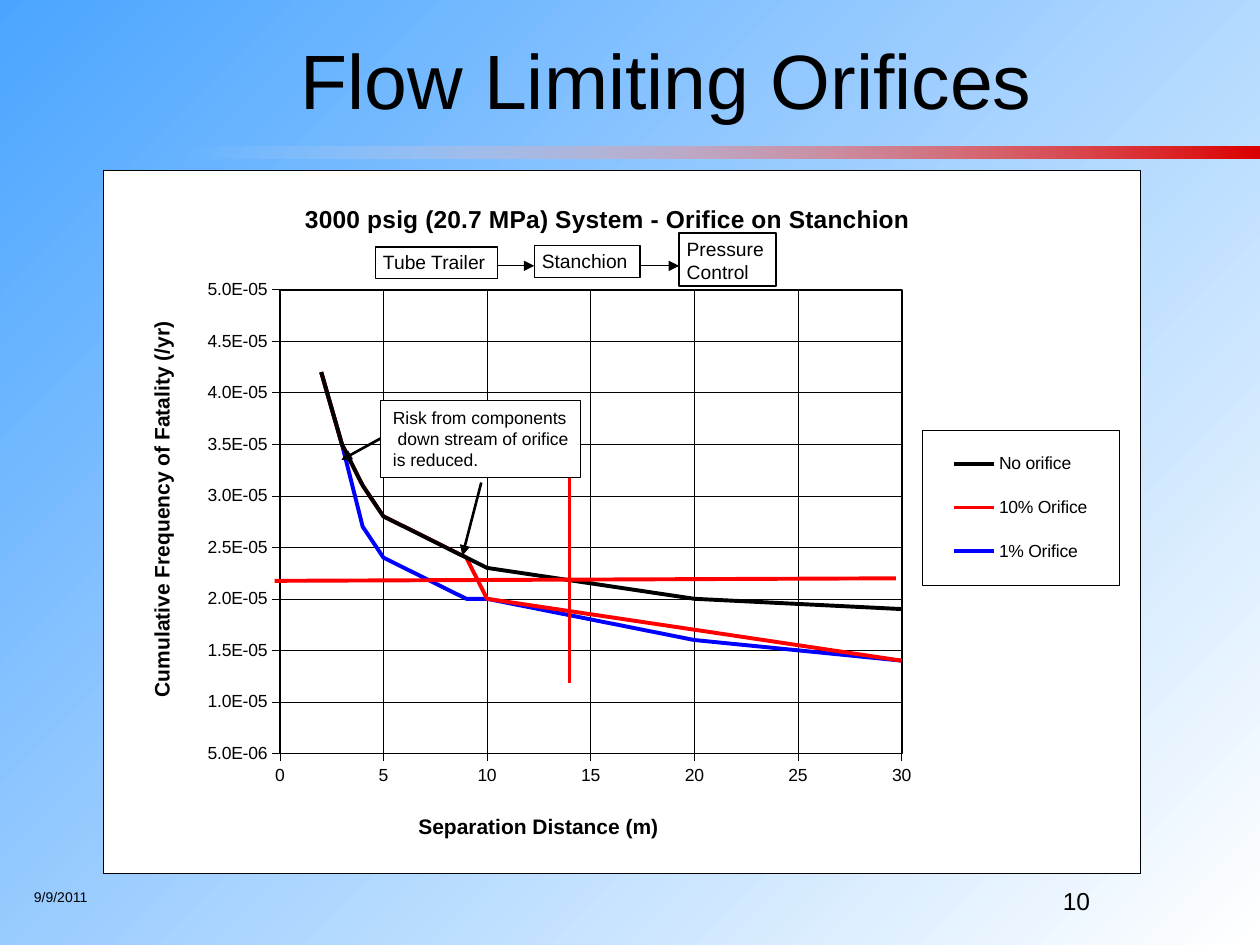
from collections import namedtuple
from dataclasses import dataclass

from lxml import etree
from pptx import Presentation
from pptx import util as u
from pptx.chart.data import XyChartData
from pptx.dml.color import RGBColor
from pptx.enum import chart as charts, shapes, text
from pptx.oxml import parse_xml
from pptx.oxml.ns import nsdecls, qn

Inches, Pt = u.Inches, u.Pt
Box = namedtuple("Box", "left top width height")


@dataclass(frozen=True)
class Theme:
    font: str = "Arial"
    black: RGBColor = RGBColor(0, 0, 0)
    white: RGBColor = RGBColor(255, 255, 255)
    red: RGBColor = RGBColor(255, 0, 0)
    blue: RGBColor = RGBColor(0, 0, 255)
    sky: RGBColor = RGBColor(0x4B, 0xA5, 0xFF)
    bar: RGBColor = RGBColor(0xDC, 0, 0)
    title: int = 44
    number: int = 14
    chart_title: int = 14
    axis_title: int = 12
    flow: int = 11
    body: int = 10
    date: int = 8


THEME = Theme()


def set_font(font, size, bold=False):
    font.name, font.size, font.bold = THEME.font, Pt(size), bold
    font.color.rgb = THEME.black


def set_line(line, color, width):
    line.color.rgb = color
    line.width = Pt(width)


def set_gradient(fill, start, end, angle):
    fill.gradient()
    fill.gradient_angle = angle
    for stop, color in zip(fill.gradient_stops, (start, end)):
        stop.color.rgb = color


def write(shape, words, size, align=text.PP_ALIGN.LEFT, space_after=0):
    frame = shape.text_frame
    frame.word_wrap = True
    frame.vertical_anchor = text.MSO_ANCHOR.TOP
    paragraph = frame.paragraphs[0]
    paragraph.text = words
    paragraph.alignment = align
    paragraph.space_after = Pt(space_after)
    set_font(paragraph.font, size)
    return frame


def add_text(slide, box, words, size, align=text.PP_ALIGN.LEFT):
    write(slide.shapes.add_textbox(*map(Inches, box)), words, size, align)


def add_label(slide, box, words, size, space_after=0):
    shape = slide.shapes.add_shape(shapes.MSO_SHAPE.RECTANGLE, *map(Inches, box))
    shape.shadow.inherit = False
    shape.fill.solid()
    shape.fill.fore_color.rgb = THEME.white
    set_line(shape.line, THEME.black, 0.75)
    return write(shape, words, size, space_after=space_after)


def add_line(slide, box, start, end, color, width, arrow=False):
    """Draw a line between two points measured from the corner of the box."""
    points = [Inches(corner + offset) for point in (start, end)
              for corner, offset in zip(box[:2], point)]
    line = slide.shapes.add_connector(shapes.MSO_CONNECTOR.STRAIGHT, *points)
    set_line(line.line, color, width)
    if arrow:
        tail = etree.SubElement(line.line._get_or_add_ln(), qn("a:tailEnd"))
        tail.set("type", "triangle")
    etree.SubElement(line._element.spPr, qn("a:effectLst"))


def add_heading(slide, box):
    bar = slide.shapes.add_shape(
        shapes.MSO_SHAPE.RECTANGLE, Inches(box.left + 0.56), Inches(box.top + 0.95),
        Inches(8.65), Inches(0.1))
    bar.shadow.inherit = False
    bar.line.fill.background()
    set_gradient(bar.fill, THEME.white, THEME.bar, 0)
    first_color = bar._element.spPr.find(".//" + qn("a:srgbClr"))
    etree.SubElement(first_color, qn("a:alpha")).set("val", "0")
    add_text(slide, box, "Flow Limiting Orifices", THEME.title, text.PP_ALIGN.CENTER)


def add_footer(slide, box):
    add_text(slide, (box.left, box.top + 0.02, 0.92, 0.25), "9/9/2011", THEME.date)
    add_text(slide, (box.left + 6.25, box.top, 2.33, box.height), "10",
             THEME.number, text.PP_ALIGN.RIGHT)


def set_layout(parent, previous, x, y, width=None, height=None, inner=False):
    """Place a chart part by fractions of the chart's size."""
    old = parent.find(qn("c:layout"))
    if old is not None:
        parent.remove(old)
    values = [("layoutTarget", "inner")] if inner else []
    values += [("xMode", "edge"), ("yMode", "edge"), ("x", x), ("y", y)]
    if width:
        values += [("w", width), ("h", height)]
    parts = "".join(f'<c:{name} val="{value}"/>' for name, value in values)
    layout = parse_xml(f'<c:layout {nsdecls("c")}><c:manualLayout>{parts}'
                       '</c:manualLayout></c:layout>')
    if previous:
        parent.find(qn(previous)).addnext(layout)
    else:
        parent.insert(0, layout)


def outlined(width):
    return parse_xml(
        f'<c:spPr {nsdecls("c", "a")}><a:solidFill><a:srgbClr val="{THEME.white}"/>'
        f'</a:solidFill><a:ln w="{Pt(width)}"><a:solidFill>'
        f'<a:srgbClr val="{THEME.black}"/></a:solidFill></a:ln></c:spPr>')


def set_title(title, words, size, x, y):
    title.text_frame.text = words
    set_font(title.text_frame.paragraphs[0].font, size, bold=True)
    set_layout(title._element, "c:tx", x, y)


def format_axis(axis, low, high, step, number_format):
    axis.minimum_scale, axis.maximum_scale, axis.major_unit = low, high, step
    axis.major_tick_mark = charts.XL_TICK_MARK.CROSS
    axis.crosses = charts.XL_AXIS_CROSSES.MINIMUM
    axis.has_major_gridlines = True
    set_line(axis.format.line, THEME.black, 0.25)
    set_line(axis.major_gridlines.format.line, THEME.black, 0.25)
    labels = axis.tick_labels
    labels.number_format, labels.number_format_is_linked = number_format, False
    set_font(labels.font, THEME.body)


def add_risk_chart(slide, box):
    distances = [2, 3, 4, 5, 6, 7, 8, 9, 10, 20, 30]
    # Frequencies in units of 1E-05 per year
    risks = [
        ("No orifice", THEME.black, [4.2, 3.5, 3.1, 2.8, 2.7, 2.6, 2.5, 2.4, 2.3, 2.0, 1.9]),
        ("10% Orifice", THEME.red, [4.2, 3.5, 3.1, 2.8, 2.7, 2.6, 2.5, 2.4, 2.0, 1.7, 1.4]),
        ("1% Orifice", THEME.blue, [4.2, 3.5, 2.7, 2.4, 2.3, 2.2, 2.1, 2.0, 2.0, 1.6, 1.4]),
    ]
    data = XyChartData(number_format="0.0E+00")
    for name, _, values in risks:
        series = data.add_series(name)
        for distance, value in zip(distances, values):
            series.add_data_point(distance, round(value * 1e-5, 7))
    chart = slide.shapes.add_chart(
        charts.XL_CHART_TYPE.XY_SCATTER_SMOOTH_NO_MARKERS, *map(Inches, box), data).chart
    set_font(chart.font, THEME.body)
    chart.plots[0].vary_by_categories = False
    for series, (_, color, _) in zip(chart.plots[0].series, risks):
        series.smooth = True
        series.marker.style = charts.XL_MARKER_STYLE.NONE
        set_line(series.format.line, color, 2.25)

    # Axes and titles
    format_axis(chart.category_axis, 0, 30, 5, "General")
    format_axis(chart.value_axis, 5e-6, 5e-5, 5e-6, "0.0E+00")
    chart.has_title = True
    set_title(chart.chart_title, "3000 psig (20.7 MPa) System - Orifice on Stanchion",
              THEME.chart_title, 0.19, 0.04)
    set_title(chart.category_axis.axis_title, "Separation Distance (m)",
              THEME.axis_title, 0.3, 0.91)
    value_title = chart.value_axis.axis_title
    set_title(value_title, "Cumulative Frequency of Fatality (/yr)",
              THEME.axis_title, 0.04, 0.21)
    value_title.text_frame._txBody.bodyPr.set("rot", "-5400000")

    # Legend, plot area and frame
    chart.has_legend = True
    chart.legend.position = charts.XL_LEGEND_POSITION.RIGHT
    chart.legend.include_in_layout = False
    set_font(chart.legend.font, THEME.body)
    legend = chart.legend._element
    set_layout(legend, "c:legendPos", 0.79, 0.37, 0.19, 0.22)
    legend.find(qn("c:overlay")).addnext(outlined(0.25))
    plot_area = chart._chartSpace.chart.plotArea
    set_layout(plot_area, None, 0.17, 0.17, 0.6, 0.66, inner=True)
    plot_area.append(outlined(1))
    chart._chartSpace.chart.addnext(outlined(0.25))


def add_limits(slide, box):
    add_line(slide, box, (0, 0.84), (4.93, 0.82), THEME.red, 2.25)
    add_line(slide, box, (2.34, 0), (2.34, 1.65), THEME.red, 2.25)


def add_flow(slide, box):
    steps = [("Tube Trailer", 0, 0.11, 0.97, 0.25), ("Stanchion", 1.26, 0.1, 0.84, 0.25),
             ("Pressure Control", 2.41, 0, 0.77, 0.42)]
    for words, left, top, width, height in steps:
        frame = add_label(slide, (box.left + left, box.top + top, width, height),
                          words, THEME.flow, space_after=10)
        frame.margin_left = frame.margin_right = Inches(0.06)
        frame.margin_top = frame.margin_bottom = Inches(0.03)
    for (_, left, _, width, _), (_, following, *_) in zip(steps, steps[1:]):
        add_line(slide, box, (left + width, 0.26), (following, 0.26),
                 THEME.black, 0.75, arrow=True)


def add_callout(slide, box):
    add_label(slide, box, "Risk from components\v down stream of orifice\vis reduced.",
              THEME.body)
    for start, end in [((0.8, 0.65), (0.65, 1.23)), ((0, 0.3), (-0.31, 0.47))]:
        add_line(slide, box, start, end, THEME.black, 1.5, arrow=True)


def main():
    presentation = Presentation()
    presentation.slide_width, presentation.slide_height = Inches(10), Inches(7.5)
    slide = presentation.slides.add_slide(presentation.slide_layouts[6])
    set_gradient(slide.background.fill, THEME.sky, THEME.white, 315)
    add_heading(slide, Box(0.79, 0.21, 9, 1.25))
    add_footer(slide, Box(0.17, 6.98, 8.58, 0.52))
    add_risk_chart(slide, Box(0.82, 1.35, 8.23, 5.58))
    add_limits(slide, Box(2.18, 3.77, 4.93, 1.65))
    add_flow(slide, Box(2.98, 1.85, 3.18, 0.42))
    add_callout(slide, Box(3.02, 3.18, 1.59, 0.61))
    presentation.save("out.pptx")


if __name__ == "__main__":
    main()
